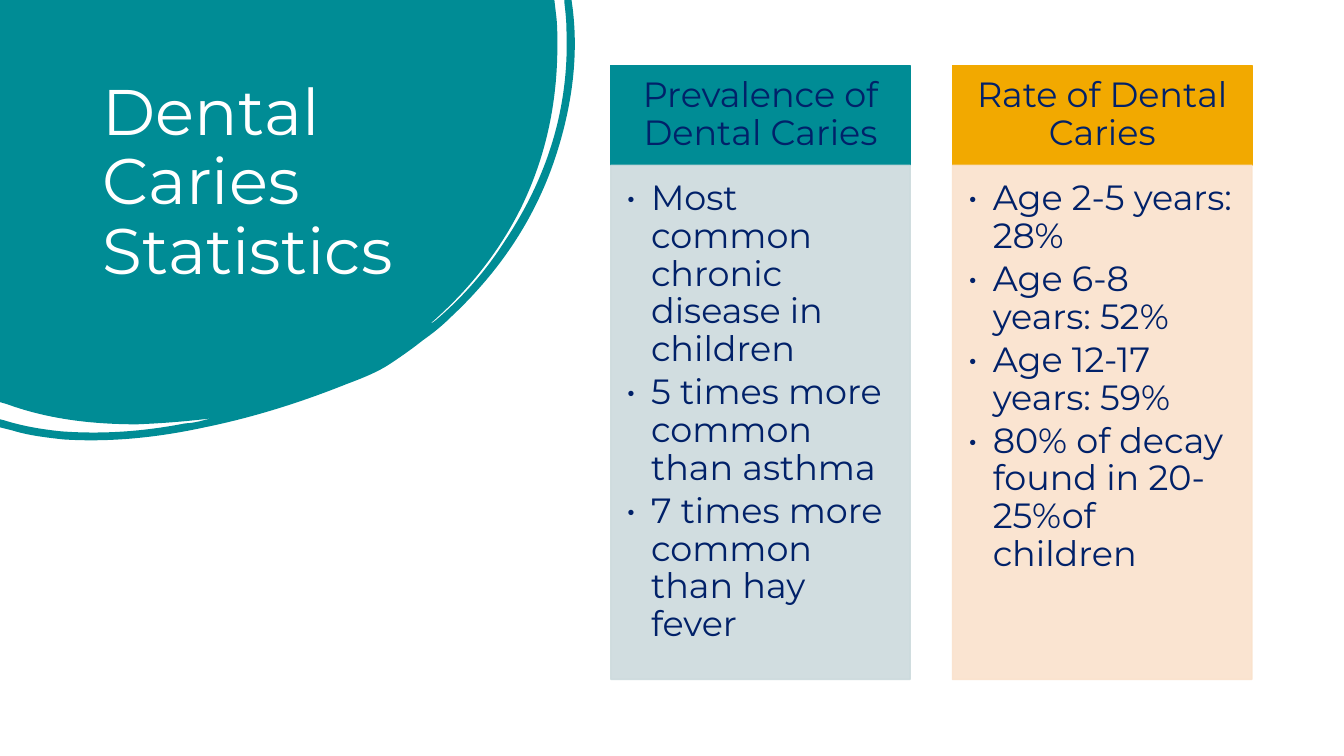
from lxml import etree
from pptx import Presentation
from pptx import util as u
from pptx.dml.color import RGBColor
from pptx.enum import shapes, text
from pptx.oxml import ns

SCALE = 9144
SLIDE_SIZE = (u.Emu(12192000), u.Emu(6858000))
FONT = "Montserrat"
TEAL, GOLD, NAVY, WHITE = "008C95", "F2A900", "012169", "FFFFFF"

BLOB_SIZE = (571, 437)
BLOB_START = (0, 0)
BLOB_SEGMENTS = [
    (550, 0), (552, 17),
    (553, 26, 553, 36, 553, 45), (553, 101, 542, 154, 518, 204),
    (496, 249, 465, 288, 427, 321), (429, 321, 430, 319, 432, 318),
    (459, 295, 482, 269, 501, 239), (543, 176, 565, 107, 562, 30),
    (562, 21, 561, 12, 560, 3),
    (560, 0), (567, 0), (568, 7),
    (574, 54, 568, 102, 553, 150), (533, 214, 497, 268, 448, 314),
    (439, 323, 429, 331, 419, 338), (409, 346, 399, 353, 387, 361),
    (375, 369, 360, 375, 344, 381), (299, 399, 252, 414, 203, 424),
    (157, 434, 110, 439, 63, 436), (45, 434, 28, 432, 12, 427),
    (0, 424), (0, 416), (4, 417),
    (23, 423, 42, 426, 61, 428), (103, 431, 143, 428, 184, 420),
    (189, 420, 193, 419, 198, 418), (202, 417, 206, 416, 210, 415),
    (186, 418, 161, 420, 136, 421), (92, 421, 48, 416, 7, 401),
    (0, 399),
]

COLUMNS = [
    ("Prevalence of Dental Caries", TEAL, "CCDADD", [
        "Most common chronic disease in children",
        "5 times more common than asthma",
        "7 times more common than hay fever",
    ]),
    ("Rate of Dental Caries", GOLD, "FAE2CC", [
        "Age 2-5 years: 28%",
        "Age 6-8 years: 52%",
        "Age 12-17 years: 59%",
        "80% of decay found in 20-25%of children",
    ]),
]
COLUMN_LEFT, COLUMN_PITCH, COLUMN_WIDTH = 606, 339, 297
HEADER_TOP, HEADER_HEIGHT, BODY_HEIGHT = 65, 99, 510


def px(length):
    """Turn a length in px into EMU."""
    return u.Emu(length * SCALE)


def color(value):
    """Turn a hex string into a colour."""
    return RGBColor.from_string(value)


def set_font(paragraph, size, value):
    """Set the font of a whole paragraph."""
    paragraph.font.name = FONT
    paragraph.font.size = u.Pt(size)
    paragraph.font.color.rgb = color(value)
    paragraph.line_spacing = 0.9


def bend(line, segment):
    """Turn a straight outline segment into a cubic curve."""
    curve = etree.Element(ns.qn("a:cubicBezTo"))
    for x, y in zip(segment[::2], segment[1::2]):
        etree.SubElement(curve, ns.qn("a:pt"), x=str(x), y=str(y))
    line.getparent().replace(line, curve)


def add_blob(slide):
    """Draw the rounded teal backdrop behind the title."""
    builder = slide.shapes.build_freeform(*BLOB_START, scale=SCALE)
    builder.add_line_segments([segment[-2:] for segment in BLOB_SEGMENTS], close=True)
    shape = builder.convert_to_shape()
    shape.width, shape.height = map(px, BLOB_SIZE)
    outline = next(shape.element.iter(ns.qn("a:path")))
    for name, length in zip("wh", BLOB_SIZE):
        outline.set(name, str(length))
    for line, segment in zip(outline.findall(ns.qn("a:lnTo")), BLOB_SEGMENTS):
        if len(segment) == 6:
            bend(line, segment)
    shape.shadow.inherit = False
    shape.fill.solid()
    shape.fill.fore_color.rgb = color(TEAL)
    shape.line.fill.background()
    slide.shapes.element.insert(2, shape.element)


def add_title(slide, words):
    """Place and format the title."""
    title = slide.shapes.title
    title.left, title.top, title.width, title.height = map(px, (92, 74, 352, 222))
    frame = title.text_frame
    frame.text = words
    frame.word_wrap = True
    frame.auto_size = text.MSO_AUTO_SIZE.NONE
    frame.vertical_anchor = text.MSO_ANCHOR.MIDDLE
    frame.margin_top = 0
    paragraph = frame.paragraphs[0]
    paragraph.alignment = text.PP_ALIGN.LEFT
    set_font(paragraph, 46, WHITE)


def add_panel(slide, box, fill, margins, anchor):
    """Add a filled rectangle and return it."""
    shape = slide.shapes.add_shape(shapes.MSO_SHAPE.RECTANGLE, *map(px, box))
    shape.shadow.inherit = False
    shape.fill.solid()
    shape.fill.fore_color.rgb = color(fill)
    shape.line.color.rgb = color(fill)
    shape.line.width = u.Pt(1)
    frame = shape.text_frame
    frame.word_wrap = True
    frame.vertical_anchor = anchor
    (frame.margin_left, frame.margin_top,
     frame.margin_right, frame.margin_bottom) = map(px, margins)
    return shape


def set_opacity(shape, percent):
    """Make the fill and line of a shape partly transparent."""
    for node in shape.element.spPr.iter(ns.qn("a:srgbClr")):
        etree.SubElement(node, ns.qn("a:alpha"), val=str(percent * 1000))


def add_bullet(paragraph):
    """Give a paragraph a hanging bullet."""
    properties = paragraph._p.get_or_add_pPr()
    properties.set("marL", str(px(25)))
    properties.set("indent", str(px(-25)))
    etree.SubElement(properties, ns.qn("a:buFont"), typeface=FONT)
    etree.SubElement(properties, ns.qn("a:buChar"), char="•")


def fill_paragraphs(frame, lines, alignment, bulleted):
    """Write the lines as paragraphs of panel text."""
    for index, line in enumerate(lines):
        paragraph = frame.add_paragraph() if index else frame.paragraphs[0]
        paragraph.text = line
        paragraph.alignment = alignment
        paragraph.space_after = u.Pt(3.75)
        if bulleted:
            add_bullet(paragraph)
        set_font(paragraph, 25, NAVY)


def add_column(slide, left, heading, header_fill, body_fill, points):
    """Add a heading panel with a bulleted panel under it."""
    header = add_panel(slide, (left, HEADER_TOP, COLUMN_WIDTH, HEADER_HEIGHT),
                       header_fill, (19, 11, 19, 11), text.MSO_ANCHOR.MIDDLE)
    fill_paragraphs(header.text_frame, [heading], text.PP_ALIGN.CENTER, False)
    body = add_panel(slide, (left, HEADER_TOP + HEADER_HEIGHT, COLUMN_WIDTH, BODY_HEIGHT),
                     body_fill, (15, 15, 19, 22), text.MSO_ANCHOR.TOP)
    set_opacity(body, 90)
    fill_paragraphs(body.text_frame, points, text.PP_ALIGN.LEFT, True)


def main():
    """Build the slide and save it."""
    presentation = Presentation()
    presentation.slide_width, presentation.slide_height = SLIDE_SIZE
    slide = presentation.slides.add_slide(presentation.slide_layouts[5])
    add_blob(slide)
    add_title(slide, "Dental Caries Statistics")
    for index, column in enumerate(COLUMNS):
        add_column(slide, COLUMN_LEFT + index * COLUMN_PITCH, *column)
    presentation.save("out.pptx")


if __name__ == "__main__":
    main()
